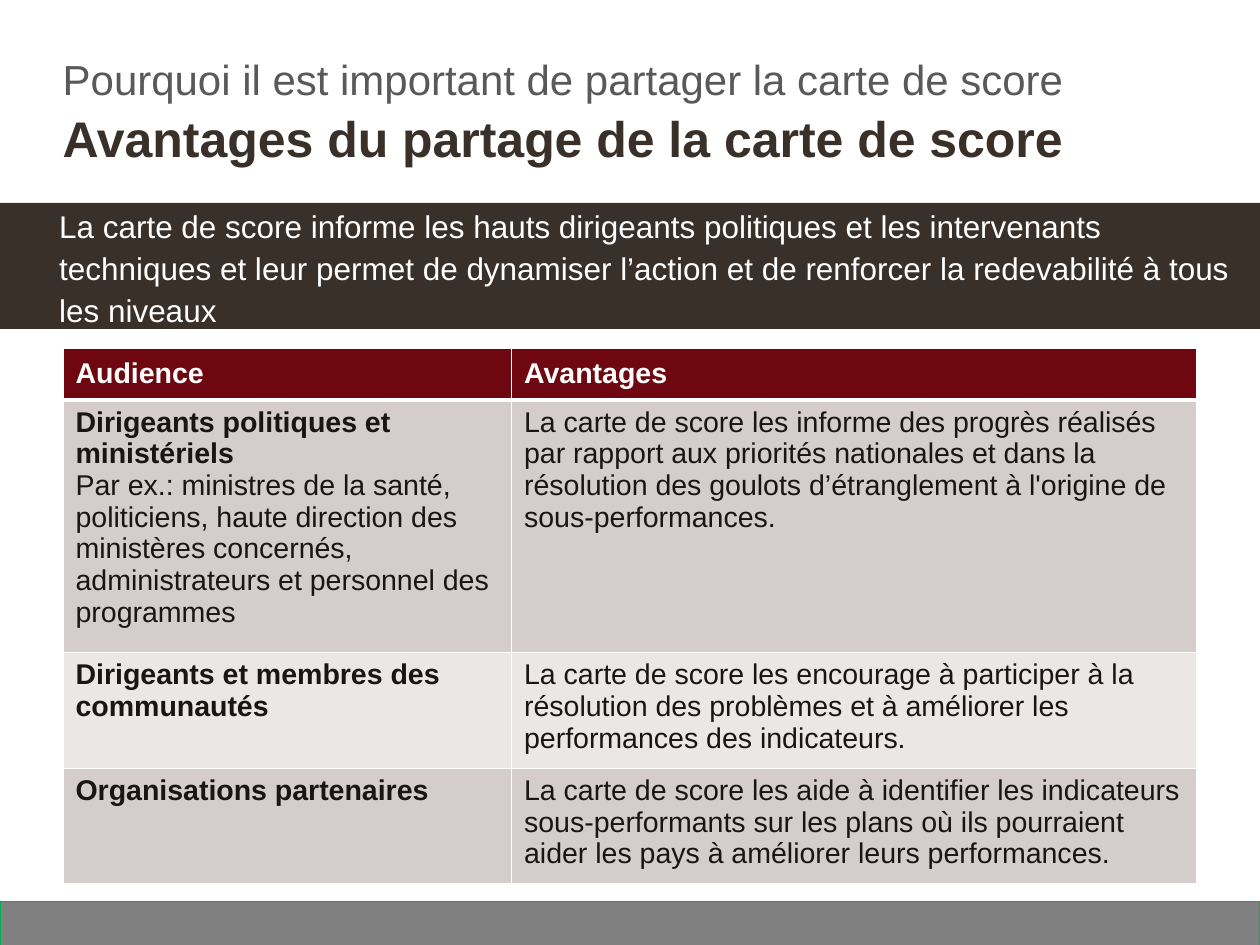
"""Build a slide on the benefits of sharing the scorecard."""
from dataclasses import dataclass

from lxml import etree
from pptx import Presentation
from pptx import util as u
from pptx.dml import color
from pptx.enum import shapes, text
from pptx.oxml import ns

WHITE, DARK, INK = "FFFFFF", "39302A", "1A1513"
WINE, ROSE, PALE = "6F0710", "D5CCCC", "EBE7E7"


@dataclass
class Run:
    words: str
    size: float
    tint: str
    bold: bool = False


@dataclass
class Bar:
    top: float
    height: float
    fill: str
    line: str = ""


@dataclass
class Label:
    left: float
    top: float
    width: float
    height: float
    run: Run
    pitch: float | u.Pt | None = None


@dataclass
class Row:
    height: float
    fill: str
    cells: list[list[Run]]


def head(words: str) -> list[Run]:
    return [Run(words, 16, WHITE, True)]


def bold(words: str) -> Run:
    return Run(words, 16, INK, True)


def plain(words: str) -> Run:
    return Run(words, 16, INK)


BARS = [Bar(17.81, 0.94, "808080", "00B050"), Bar(4.01, 2.49, DARK)]
LABELS = [
    Label(1.24, 2.13, 22.4, 1.19,
          Run("Avantages du partage de la carte de score", 28, DARK, True)),
    Label(1.24, 1.17, 22.4, 0.91,
          Run("Pourquoi il est important de partager la carte de score",
              23.5, "595959"), 0.9),
    Label(1.17, 4.01, 23.32, 2.49,
          Run("La carte de score informe les hauts dirigeants politiques et "
              "les intervenants techniques et leur permet de dynamiser "
              "l’action et de renforcer la redevabilité à tous les niveaux",
              17.6, WHITE), u.Pt(23.5)),
]
COLS = [8.86, 13.54]
ROWS = [
    Row(1.02, WINE, [head("Audience"), head("Avantages")]),
    Row(4.9, ROSE, [
        [bold("Dirigeants politiques et ministériels"),
         plain("Par ex.: ministres de la santé, politiciens, haute direction "
               "des ministères concernés, administrateurs et personnel des "
               "programmes")],
        [plain("La carte de score les informe des progrès réalisés par "
               "rapport aux priorités nationales et dans la résolution des "
               "goulots d’étranglement à l'origine de sous-performances.")]]),
    Row(2.24, PALE, [
        [bold("Dirigeants et membres des communautés")],
        [plain("La carte de score les encourage à participer à la résolution "
               "des problèmes et à améliorer les performances des "
               "indicateurs.")]]),
    Row(2.24, ROSE, [
        [bold("Organisations partenaires")],
        [plain("La carte de score les aide à identifier les indicateurs "
               "sous-performants sur les plans où ils pourraient aider les "
               "pays à améliorer leurs performances.")]]),
]


def rgb(code: str) -> color.RGBColor:
    return color.RGBColor.from_string(code)


def write(para, run: Run) -> None:
    part = para.add_run()
    part.text = run.words
    font = part.font
    font.name, font.size, font.bold = "Arial", u.Pt(run.size), run.bold
    font.color.rgb = rgb(run.tint)


def draw_bar(slide, bar: Bar, width: int) -> None:
    box = slide.shapes.add_shape(shapes.MSO_SHAPE.RECTANGLE, 0, u.Cm(bar.top),
                                 width, u.Cm(bar.height))
    box.shadow.inherit = False
    box.fill.solid()
    box.fill.fore_color.rgb = rgb(bar.fill)
    if bar.line:
        box.line.color.rgb = rgb(bar.line)
        box.line.width = u.Pt(0.75)
    else:
        box.line.fill.background()


def draw_label(slide, label: Label) -> None:
    box = slide.shapes.add_textbox(u.Cm(label.left), u.Cm(label.top),
                                   u.Cm(label.width), u.Cm(label.height))
    frame = box.text_frame
    frame.word_wrap = True
    frame.margin_left = frame.margin_right = 0
    frame.margin_top = frame.margin_bottom = 0
    para = frame.paragraphs[0]
    para.line_spacing = label.pitch
    write(para, label.run)


def set_edges(cell, top: int, bottom: int) -> None:
    props = cell._tc.get_or_add_tcPr()
    widths = {"lnL": 1, "lnR": 1, "lnT": top, "lnB": bottom}
    for spot, (name, width) in enumerate(widths.items()):
        edge = etree.Element(ns.qn(f"a:{name}"), w=str(u.Pt(width)))
        fill = etree.SubElement(edge, ns.qn("a:solidFill"))
        etree.SubElement(fill, ns.qn("a:srgbClr"), val=WHITE)
        props.insert(spot, edge)


def draw_table(slide, rows: list[Row], cols: list[float]) -> None:
    high = sum(row.height for row in rows)
    grid = slide.shapes.add_table(len(rows), len(cols), u.Cm(1.24), u.Cm(6.88),
                                  u.Cm(sum(cols)), u.Cm(high)).table
    grid.first_row = grid.horz_banding = False
    for col, width in zip(grid.columns, cols):
        col.width = u.Cm(width)
    for y, row in enumerate(rows):
        grid.rows[y].height = u.Cm(row.height)
        for x, runs in enumerate(row.cells):
            cell = grid.cell(y, x)
            cell.fill.solid()
            cell.fill.fore_color.rgb = rgb(row.fill)
            set_edges(cell, 3 if y == 1 else 1, 3 if y == 0 else 1)
            if y == 0:
                cell.vertical_anchor = text.MSO_ANCHOR.MIDDLE
            frame = cell.text_frame
            for spot, run in enumerate(runs):
                para = frame.add_paragraph() if spot else frame.paragraphs[0]
                write(para, run)


def main() -> None:
    deck = Presentation()
    deck.slide_width, deck.slide_height = u.Cm(24.89), u.Cm(18.67)
    slide = deck.slides.add_slide(deck.slide_layouts[6])
    for bar in BARS:
        draw_bar(slide, bar, deck.slide_width)
    for label in LABELS:
        draw_label(slide, label)
    draw_table(slide, ROWS, COLS)
    deck.save("out.pptx")


if __name__ == "__main__":
    main()
